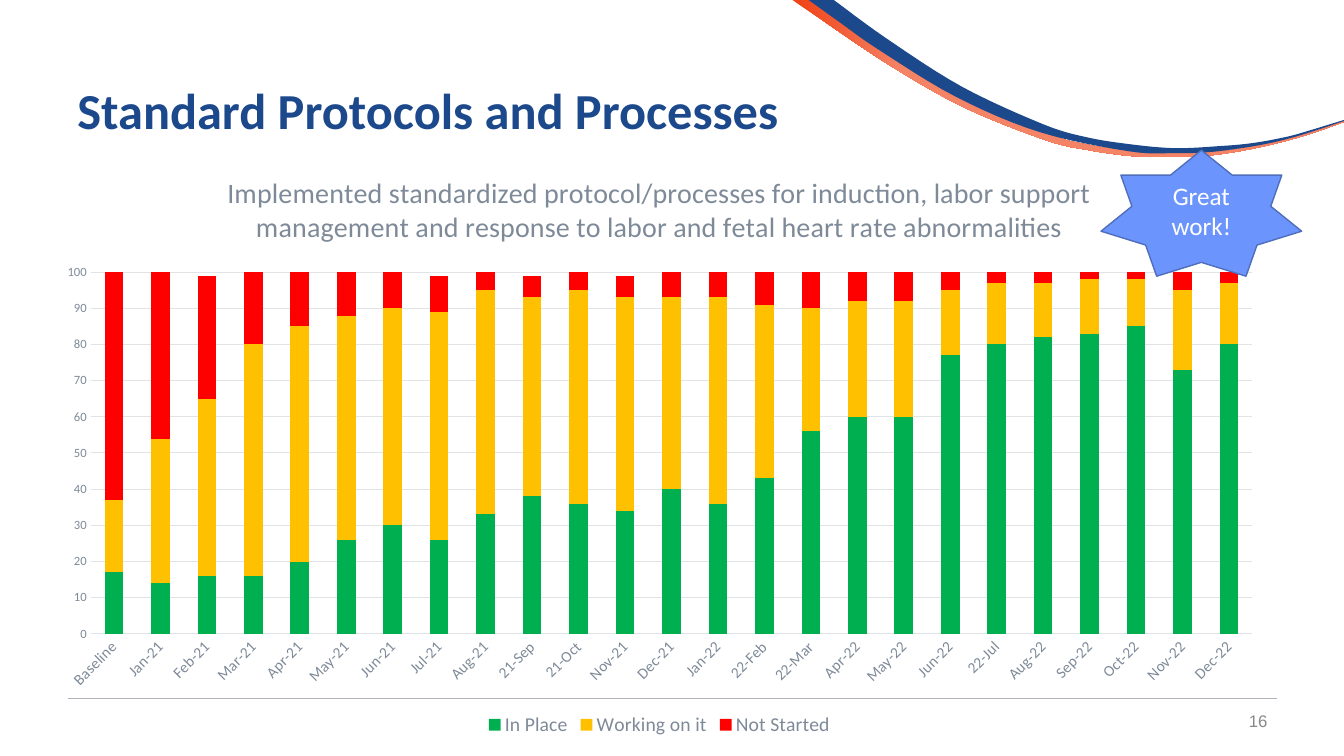
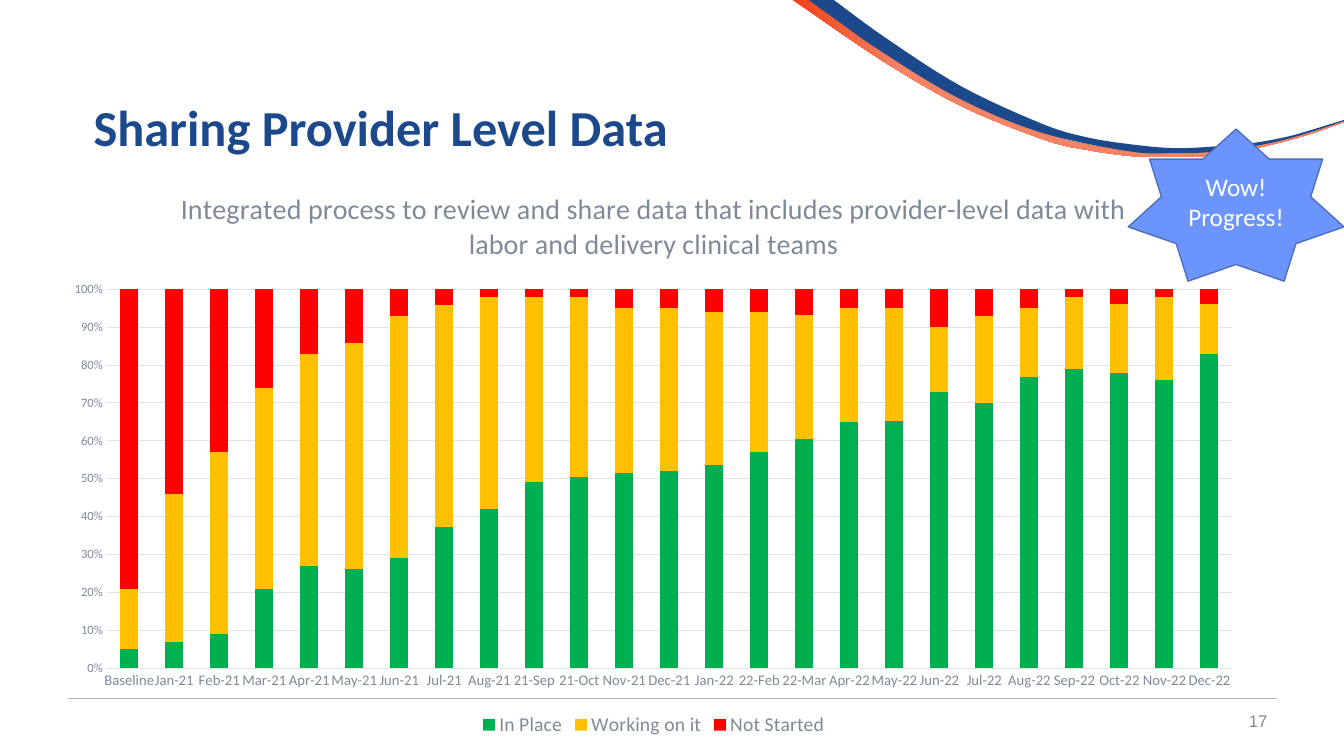
from pptx import Presentation
from pptx import util as u
from pptx.chart import data as cd
from pptx.dml import color as dml
from pptx.enum import chart as ce, shapes, text
from pptx.oxml import parse_xml
from pptx.oxml.ns import nsdecls, qn

NAVY, GRAY, GRID = "1C498B", "7E8A98", "E1E4E7"
KEYS = [("In Place", "00B050"), ("Working on it", "FFC000"), ("Not Started", "FF0000")]
MONTHS = ("Baseline Jan-21 Feb-21 Mar-21 Apr-21 May-21 Jun-21 Jul-21 Aug-21 21-Sep "
          "21-Oct Nov-21 Dec-21 Jan-22 22-Feb 22-Mar Apr-22 May-22 Jun-22 {} "
          "Aug-22 Sep-22 Oct-22 Nov-22 Dec-22")

WAVES = [
    (("F04115", "F58366"),
     [(8.05, 0), (8.82, .54), (9.58, .99), (10.39, 1.33), (10.81, 1.44), (11.25, 1.5),
      (11.68, 1.52), (12.01, 1.51), (12.34, 1.47), (12.67, 1.4), (12.99, 1.32), (13.33, 1.2)],
     [(13.33, 1.21), (12.99, 1.33), (12.67, 1.42), (12.35, 1.49), (12.02, 1.54), (11.69, 1.56),
      (11.24, 1.55), (10.8, 1.49), (10.37, 1.39), (9.55, 1.06), (8.78, .62), (8.04, .12), (7.86, 0)]),
    ((NAVY,),
     [(8.27, 0), (8.79, .38), (9.54, .86), (10.34, 1.23), (10.77, 1.36), (11.2, 1.43),
      (11.65, 1.47), (12.09, 1.45), (12.42, 1.42), (12.75, 1.36), (12.97, 1.3), (13.33, 1.19)],
     [(13.33, 1.2), (12.97, 1.32), (12.64, 1.41), (12.31, 1.47), (11.98, 1.51), (11.64, 1.52),
      (11.19, 1.5), (10.31, 1.31), (9.48, .96), (8.71, .49), (8.34, .23), (8.02, 0)]),
]

SLIDES = [
    dict(title="Standard Protocols and Processes", spot=(.67, .4), page="16",
         star="Great work!", burst=(10.92, 1.49, 1.99, 1.25),
         head="Implemented standardized protocol/processes for induction, labor support "
              "management and response to labor and fetal heart rate abnormalities",
         box=(.42, 1.49, 12.24, 5.86), plot=(.9, 2.7, 11.52, 3.59),
         kind="COLUMN_STACKED", july="22-Jul", size=11, turn=-2700000, top=100, form="0",
         rows=[[17, 14, 16, 16, 20, 26, 30, 26, 33, 38, 36, 34, 40, 36, 43, 56, 60, 60, 77, 80, 82, 83, 85, 73, 80],
               [20, 40, 49, 64, 65, 62, 60, 63, 62, 55, 59, 59, 53, 57, 48, 34, 32, 32, 18, 17, 15, 15, 13, 22, 17],
               [63, 46, 34, 21, 15, 12, 10, 10, 5, 6, 5, 6, 7, 7, 10, 10, 8, 8, 5, 3, 4, 2, 2, 5, 3]]),
    dict(title="Sharing Provider Level Data", spot=(.83, .57), page="17",
         star="Wow! Progress!", burst=(11.19, 1.28, 2.14, 1.51),
         head="Integrated process to review and share data that includes provider-level "
              "data with labor and delivery clinical teams",
         box=(.51, 1.66, 11.95, 5.69), plot=(1.06, 2.87, 11.16, 3.76),
         kind="COLUMN_STACKED_100", july="Jul-22", size=10.5, turn=-60000000, top=None, form="0%",
         rows=[[5, 7, 9, 21, 27, 26, 29, 37, 42, 49, 51, 52, 52, 53, 57, 61, 65, 66, 73, 70, 76, 79, 78, 76, 83],
               [16, 39, 48, 53, 56, 59, 64, 58, 56, 49, 48, 44, 43, 40, 37, 33, 30, 30, 17, 23, 18, 19, 18, 22, 13],
               [80, 54, 43, 26, 17, 14, 7, 4, 2, 2, 2, 5, 5, 6, 6, 7, 5, 5, 10, 7, 5, 2, 4, 2, 4]]),
]


def rgb(code):
    return dml.RGBColor.from_string(code)


def inch(vals):
    return [u.Inches(v) for v in vals]


def style(font, size, code, face="Calibri", bold=False):
    font.size, font.name, font.bold = u.Pt(size), face, bold
    font.color.rgb = rgb(code)


def write(shape, words, size, code, align, face="Calibri", bold=False):
    frame = shape.text_frame
    frame.word_wrap = True
    frame.vertical_anchor = text.MSO_ANCHOR.MIDDLE
    para = frame.paragraphs[0]
    para.alignment = align
    run = para.add_run()
    run.text = words
    style(run.font, size, code, face, bold)
    return para


def stroke(line, code, width):
    line.color.rgb = rgb(code)
    line.width = u.Pt(width)


def smooth(pts, steps=6):
    ends = [pts[0], *pts, pts[-1]]
    out = [pts[0]]
    for a, b, c, d in zip(ends, ends[1:], ends[2:], ends[3:]):
        for n in range(1, steps + 1):
            t = n / steps
            out.append(tuple(
                (2 * q + (r - p) * t + (2 * p - 5 * q + 4 * r - s) * t ** 2
                 + (3 * q - p - 3 * r + s) * t ** 3) / 2
                for p, q, r, s in zip(a, b, c, d)))
    return out


def wave(slide, tints, upper, lower):
    pts = [inch(p) for p in smooth(upper) + smooth(lower)]
    form = slide.shapes.build_freeform(*pts[0])
    form.add_line_segments(pts[1:], close=True)
    shape = form.convert_to_shape()
    shape.shadow.inherit = False
    shape.line.fill.background()
    if len(tints) == 1:
        shape.fill.solid()
        shape.fill.fore_color.rgb = rgb(tints[0])
        return
    shape.fill.gradient()
    shape.fill.gradient_angle = 0
    for stop, tint, pos in zip(shape.fill.gradient_stops, tints, (0, .2)):
        stop.color.rgb = rgb(tint)
        stop.position = pos


def frame(slide, item):
    for band in WAVES:
        wave(slide, *band)
    rule = slide.shapes.add_connector(shapes.MSO_CONNECTOR.STRAIGHT, *inch((.67, 6.93, 12.67, 6.93)))
    stroke(rule.line, "AFB3B9", .5)
    rule._element.spPr.append(parse_xml(f"<a:effectLst {nsdecls('a')}/>"))
    page = slide.shapes.add_textbox(*inch((9.67, 6.95, 3, .4)))
    write(page, item["page"], 12, "898989", text.PP_ALIGN.RIGHT, "Arial")
    title = slide.shapes.add_textbox(*inch((*item["spot"], 12, 1.45)))
    para = write(title, item["title"], 36, NAVY, text.PP_ALIGN.LEFT, bold=True)
    para.line_spacing = .9


def place(chart, box, plot):
    sides = ((plot[0] - box[0]) / box[2], (plot[1] - box[1]) / box[3],
             plot[2] / box[2], plot[3] / box[3])
    vals = "".join(f'<c:{tag} val="{val:.4f}"/>' for tag, val in zip("xywh", sides))
    area = chart._chartSpace.chart.plotArea
    for old in area.findall(qn("c:layout")):
        area.remove(old)
    area.insert(0, parse_xml(
        f'<c:layout {nsdecls("c")}><c:manualLayout><c:layoutTarget val="inner"/>'
        f'<c:xMode val="edge"/><c:yMode val="edge"/>{vals}</c:manualLayout></c:layout>'))


def graph(slide, item):
    data = cd.CategoryChartData()
    data.categories = MONTHS.format(item["july"]).split()
    for (name, _), row in zip(KEYS, item["rows"]):
        data.add_series(name, row)
    kind = getattr(ce.XL_CHART_TYPE, item["kind"])
    chart = slide.shapes.add_chart(kind, *inch(item["box"]), data).chart
    style(chart.font, 10, "444C55")
    chart.has_title = True
    run = chart.chart_title.text_frame.paragraphs[0].add_run()
    run.text = item["head"]
    style(run.font, 20, GRAY)
    chart.chart_title.include_in_layout = False
    chart.has_legend = True
    chart.legend.position = ce.XL_LEGEND_POSITION.BOTTOM
    chart.legend.include_in_layout = False
    style(chart.legend.font, 14, GRAY)
    bars = chart.plots[0]
    bars.gap_width, bars.overlap, bars.vary_by_categories = 150, 100, False
    for row, (_, code) in zip(bars.series, KEYS):
        row.format.fill.solid()
        row.format.fill.fore_color.rgb = rgb(code)
    cat, val = chart.category_axis, chart.value_axis
    for axis, size in ((cat, item["size"]), (val, 9)):
        axis.major_tick_mark = axis.minor_tick_mark = ce.XL_TICK_MARK.NONE
        style(axis.tick_labels.font, size, GRAY)
    stroke(cat.format.line, GRID, .75)
    cat._element.txPr.bodyPr.set("rot", str(item["turn"]))
    val.format.line.fill.background()
    stroke(val.major_gridlines.format.line, GRID, .75)
    if item["top"]:
        val.minimum_scale, val.maximum_scale, val.major_unit = 0, item["top"], 10
    val.tick_labels.number_format = item["form"]
    val.tick_labels.number_format_is_linked = False
    place(chart, item["box"], item["plot"])


def burst(slide, item):
    star = slide.shapes.add_shape(shapes.MSO_SHAPE.STAR_7_POINT, *inch(item["burst"]))
    star.shadow.inherit = False
    star.fill.solid()
    star.fill.fore_color.rgb = rgb("6B95FD")
    stroke(star.line, "4F6EBB", 1)
    write(star, item["star"], 18, "FFFFFF", text.PP_ALIGN.CENTER)


def main():
    deck = Presentation()
    deck.slide_width, deck.slide_height = inch((13.33, 7.5))
    for item in SLIDES:
        slide = deck.slides.add_slide(deck.slide_layouts[6])
        for draw in (frame, graph, burst):
            draw(slide, item)
    deck.save("out.pptx")


if __name__ == "__main__":
    main()
